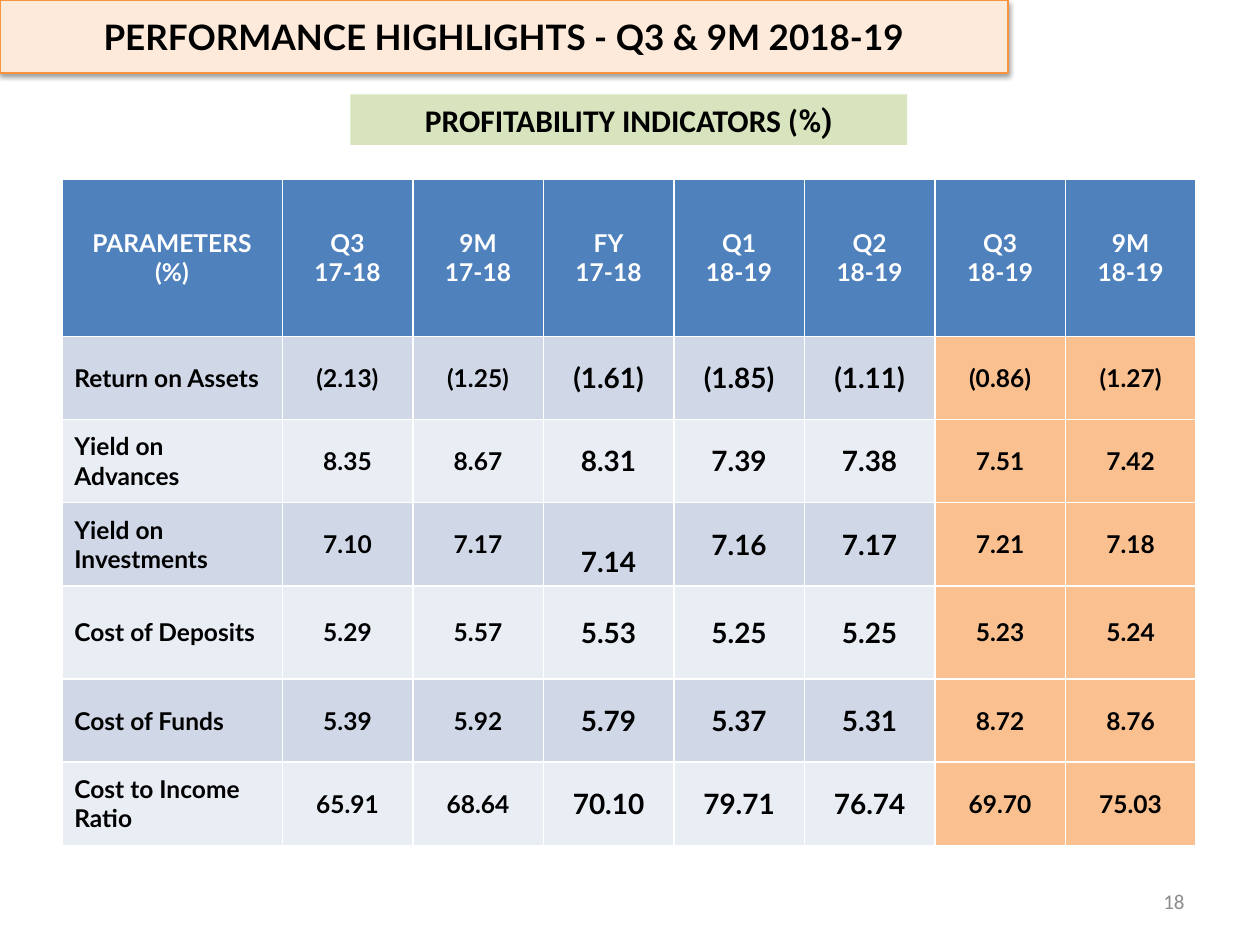
"""Build the profitability indicators slide with its quarterly table."""
from lxml import etree
from pptx import Presentation
from pptx.dml.color import RGBColor
from pptx.enum.shapes import MSO_SHAPE
from pptx.enum.text import MSO_ANCHOR, PP_ALIGN
from pptx.oxml import parse_xml
from pptx.oxml.ns import nsdecls, qn
from pptx.util import Inches, Pt

RECT = MSO_SHAPE.RECTANGLE
MIDDLE, TOP = MSO_ANCHOR.MIDDLE, MSO_ANCHOR.TOP
LEFT, CENTER, RIGHT = PP_ALIGN.LEFT, PP_ALIGN.CENTER, PP_ALIGN.RIGHT

COLORS = {
    "title": "FDEADA", "title_line": "F69240", "subtitle": "D7E4BD",
    "header": "4F81BD", "odd": "D0D8E8", "even": "E9EDF4", "current": "FAC090",
    "black": "000000", "white": "FFFFFF", "gray": "8C8C8C",
}
PERIODS = ["Q3 17-18", "9M 17-18", "FY 17-18", "Q1 18-19", "Q2 18-19", "Q3 18-19", "9M 18-19"]
ROWS = [
    ["Return on Assets", "(2.13)", "(1.25)", "(1.61)", "(1.85)", "(1.11)", "(0.86)", "(1.27)"],
    ["Yield on Advances", "8.35", "8.67", "8.31", "7.39", "7.38", "7.51", "7.42"],
    ["Yield on Investments", "7.10", "7.17", "7.14", "7.16", "7.17", "7.21", "7.18"],
    ["Cost of Deposits", "5.29", "5.57", "5.53", "5.25", "5.25", "5.23", "5.24"],
    ["Cost of Funds", "5.39", "5.92", "5.79", "5.37", "5.31", "8.72", "8.76"],
    ["Cost to Income Ratio", "65.91", "68.64", "70.10", "79.71", "76.74", "69.70", "75.03"],
]
COL_WIDTHS = [1.75] + [1.036] * len(PERIODS)
ROW_HEIGHTS = [1.25, 0.66, 0.66, 0.66, 0.74, 0.66, 0.66]


def rgb(name):
    return RGBColor.from_string(COLORS[name])


def add_run(p, text, size, font, color="black", bold=True, align=CENTER):
    p.alignment = align
    r = p.add_run()
    r.text = text
    r.font.size = Pt(size)
    r.font.name = font
    r.font.bold = bold
    r.font.color.rgb = rgb(color)


prs = Presentation()
prs.slide_width, prs.slide_height = Inches(10), Inches(7.5)
s = prs.slides.add_slide(prs.slide_layouts[6])

sp = s.shapes.add_shape(RECT, Inches(2.78), Inches(0.75), Inches(4.42), Inches(0.4))
sp.shadow.inherit = False
sp.fill.solid()
sp.fill.fore_color.rgb = rgb("subtitle")
sp.line.fill.background()
tf = sp.text_frame
tf.vertical_anchor = TOP
add_run(tf.paragraphs[0], "PROFITABILITY INDICATORS (", 18, "Calibri")
add_run(tf.paragraphs[0], "%)", 18, "Roboto")

sp = s.shapes.add_textbox(Inches(7.17), Inches(6.95), Inches(2.33), Inches(0.4))
tf = sp.text_frame
tf.word_wrap = True
tf.vertical_anchor = MIDDLE
add_run(tf.paragraphs[0], "18", 12, "Calibri", "gray", False, RIGHT)

frame = s.shapes.add_table(len(ROW_HEIGHTS), len(COL_WIDTHS), Inches(0.49), Inches(1.42),
                           Inches(sum(COL_WIDTHS)), Inches(sum(ROW_HEIGHTS)))
table = frame.table
for col, width in zip(table.columns, COL_WIDTHS):
    col.width = Inches(width)
for row, height in zip(table.rows, ROW_HEIGHTS):
    row.height = Inches(height)

for i, values in enumerate([["PARAMETERS (%)"] + PERIODS] + ROWS):
    for j, value in enumerate(values):
        cell = table.cell(i, j)
        cell.vertical_anchor = MIDDLE
        lines = value.split() if i == 0 and j > 0 else [value]
        size = 16 if i > 0 and 3 <= j <= 5 else 14
        color = "white" if i == 0 else "black"
        align = LEFT if i > 0 and j == 0 else CENTER
        for n, line in enumerate(lines):
            p = cell.text_frame.add_paragraph() if n else cell.text_frame.paragraphs[0]
            add_run(p, line, size, "Lato", color, True, align)
        fill = "header" if i == 0 else "current" if j > 5 else "odd" if i % 2 else "even"
        cell.fill.solid()
        cell.fill.fore_color.rgb = rgb(fill)
        tcPr = cell._tc.get_or_add_tcPr()
        for k, side in enumerate(["lnL", "lnR", "lnT", "lnB"]):
            tcPr.insert(k, parse_xml(
                f'<a:{side} {nsdecls("a")} w="12700"><a:solidFill>'
                f'<a:srgbClr val="{COLORS["white"]}"/></a:solidFill></a:{side}>'))
table.cell(3, 3).margin_top = Inches(0.32)

sp = s.shapes.add_shape(RECT, 0, 0, Inches(8), Inches(0.58))
sp.shadow.inherit = False
sp.fill.solid()
sp.fill.fore_color.rgb = rgb("title")
sp.line.color.rgb = rgb("title_line")
sp.line.width = Pt(0.75)
effects = sp._element.spPr.find(qn("a:effectLst"))
shadow = etree.SubElement(effects, qn("a:outerShdw"), blurRad="40000", dist="20000",
                          dir="5400000", rotWithShape="0")
tint = etree.SubElement(shadow, qn("a:srgbClr"), val=COLORS["black"])
etree.SubElement(tint, qn("a:alpha"), val="38000")
tf = sp.text_frame
tf.vertical_anchor = MIDDLE
add_run(tf.paragraphs[0], "PERFORMANCE HIGHLIGHTS - Q3 & 9M 2018-19", 20, "Lato")

prs.save("out.pptx")
